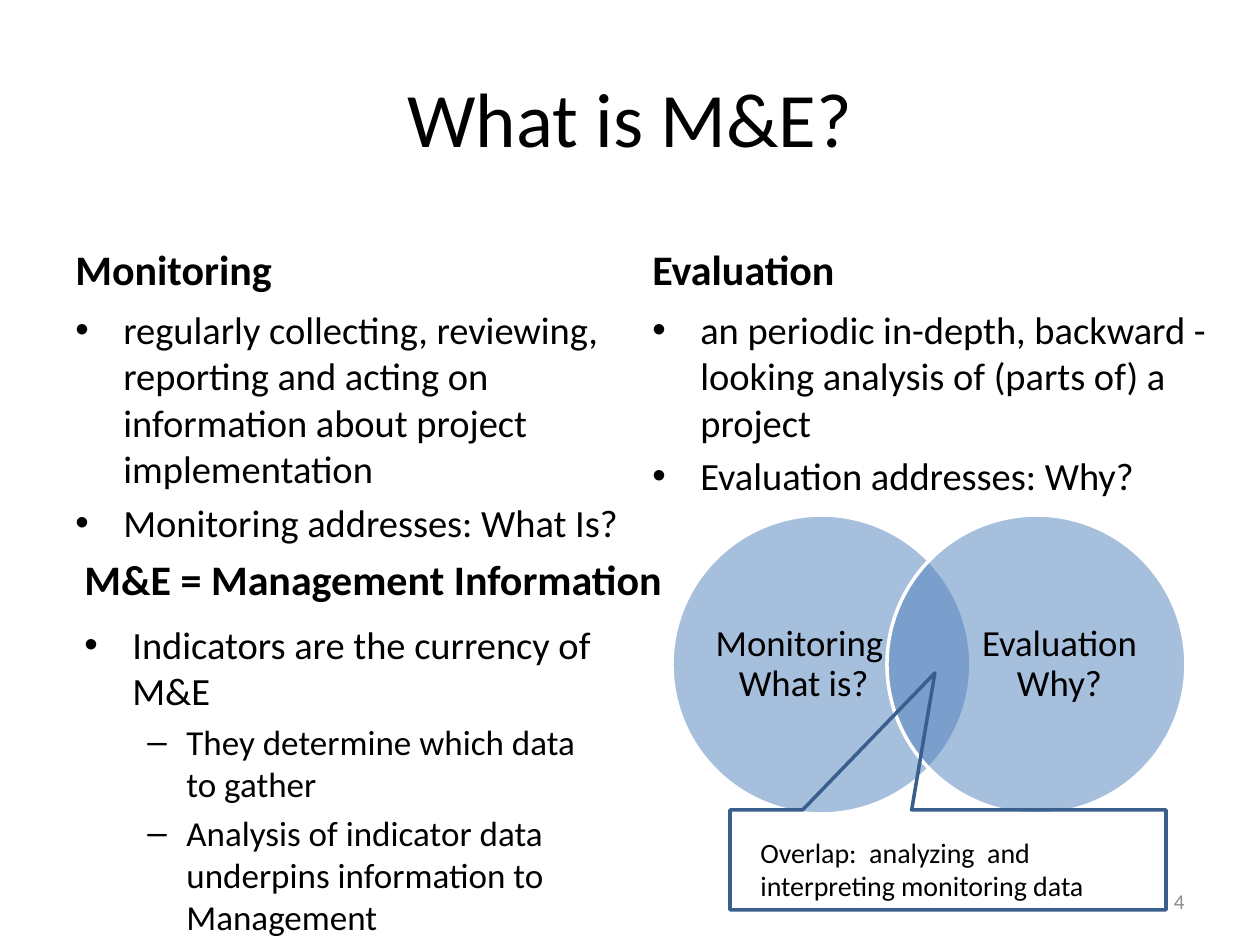
from lxml import etree
from pptx import Presentation
from pptx.dml.color import RGBColor
from pptx.enum.shapes import MSO_SHAPE
from pptx.enum.text import MSO_ANCHOR, PP_ALIGN
from pptx.oxml.ns import qn
from pptx.util import Emu, Pt

TOP, MIDDLE, BOTTOM = MSO_ANCHOR.TOP, MSO_ANCHOR.MIDDLE, MSO_ANCHOR.BOTTOM
LEFT, CENTER, RIGHT = PP_ALIGN.LEFT, PP_ALIGN.CENTER, PP_ALIGN.RIGHT
OVAL, CALLOUT = MSO_SHAPE.OVAL, MSO_SHAPE.RECTANGULAR_CALLOUT

PX = 914400 // 126
FONT = "Calibri"
COLORS = {"text": "000000", "number": "8C8C8C", "circle": "4F81BD",
          "ring": "FFFFFF", "callout": "3A5F8C"}

TITLE = "What is M&E?"
HEADS = [
    ("Monitoring", (63, 212, 557, 88)),
    ("Evaluation", (640, 212, 557, 88)),
    ("M&E = Management Information", (72, 522, 625, 88)),
]
# Each list item is (level, text)
LISTS = [
    ((63, 300, 592, 241), [
        (0, "regularly collecting, reviewing, reporting and acting on "
            "information about project implementation"),
        (0, "Monitoring addresses: What Is?")]),
    ((640, 300, 595, 232), [
        (0, "an periodic in-depth, backward - looking analysis of "
            "(parts of) a project"),
        (0, "Evaluation addresses: Why?")]),
    ((72, 615, 548, 314), [
        (0, "Indicators are the currency of M&E"),
        (1, "They determine which data to gather"),
        (1, "Analysis of indicator data underpins information to Management")]),
]
# Bullet, size in points, indent and hanging in px
LEVELS = [("•", 22, 48, 48), ("–", 20, 102, 39)]
# Text, left of circle, left of text
CIRCLES = [("Monitoring  What is?", 672, 713), ("Evaluation Why?", 887, 973)]
NOTE = "Overlap:  analyzing  and interpreting monitoring data"
NUMBER = "4"


def rgb(name):
    return RGBColor.from_string(COLORS[name])


def place(box):
    return [Emu(v * PX) for v in box]


def style(para, size, color="text", bold=False, align=LEFT):
    para.alignment = align
    for run in para.runs:
        font = run.font
        font.name, font.size, font.bold = FONT, Pt(size), bold
        font.color.rgb = rgb(color)


def add_box(slide, box, anchor=TOP):
    frame = slide.shapes.add_textbox(*place(box)).text_frame
    frame.word_wrap = True
    frame.vertical_anchor = anchor
    return frame


def add_text(slide, text, box, size, anchor=TOP, **look):
    frame = add_box(slide, box, anchor)
    frame.text = text
    style(frame.paragraphs[0], size, **look)
    return frame


def add_list(slide, box, items):
    frame = add_box(slide, box)
    frame.text = "\n".join(text for _, text in items)
    for para, (level, _) in zip(frame.paragraphs, items):
        mark, size, indent, hang = LEVELS[level]
        para.level = level
        para.space_before = Pt(size * 0.2)
        style(para, size)
        props = para._p.get_or_add_pPr()
        props.set("marL", str(indent * PX))
        props.set("indent", str(-hang * PX))
        etree.SubElement(props, qn("a:buFont")).set("typeface", "Arial")
        etree.SubElement(props, qn("a:buChar")).set("char", mark)


def add_shape(slide, kind, box, line):
    shape = slide.shapes.add_shape(kind, *place(box))
    shape.shadow.inherit = False
    shape.line.color.rgb = rgb(line)
    shape.line.width = Pt(2)
    return shape


def add_circle(slide, text, left, inner):
    circle = add_shape(slide, OVAL, (left, 515, 299, 299), "ring")
    circle.fill.solid()
    circle.fill.fore_color.rgb = rgb("circle")
    color = circle.fill._xPr.find(".//" + qn("a:srgbClr"))
    etree.SubElement(color, qn("a:alpha")).set("val", "50000")
    frame = add_text(slide, text, (inner, 551, 173, 228), 21, MIDDLE,
                     align=CENTER)
    frame.margin_left = frame.margin_right = 0
    frame.margin_top = frame.margin_bottom = 0
    para = frame.paragraphs[0]
    para.line_spacing = 0.9
    para.space_after = Pt(21 * 0.35)


def main():
    deck = Presentation()
    deck.slide_width, deck.slide_height = place((1260, 945))
    slide = deck.slides.add_slide(deck.slide_layouts[5])

    title = slide.shapes.title
    title.left, title.top, title.width, title.height = place((63, 38, 1134, 158))
    title.text_frame.text = TITLE
    title.text_frame.vertical_anchor = MIDDLE
    style(title.text_frame.paragraphs[0], 44, align=CENTER)

    for text, box in HEADS:
        head = add_text(slide, text, box, 24, BOTTOM, bold=True)
        head.paragraphs[0].space_before = Pt(24 * 0.2)
    for box, items in LISTS:
        add_list(slide, box, items)
    add_text(slide, NUMBER, (903, 876, 294, 50), 12, MIDDLE,
             color="number", align=RIGHT)

    for circle in CIRCLES:
        add_circle(slide, *circle)

    callout = add_shape(slide, CALLOUT, (730, 810, 436, 100), "callout")
    callout.fill.background()
    callout.adjustments[0] = -0.03
    callout.adjustments[1] = -1.87
    add_text(slide, NOTE, (748, 829, 397, 81), 16)

    deck.save("out.pptx")


if __name__ == "__main__":
    main()
